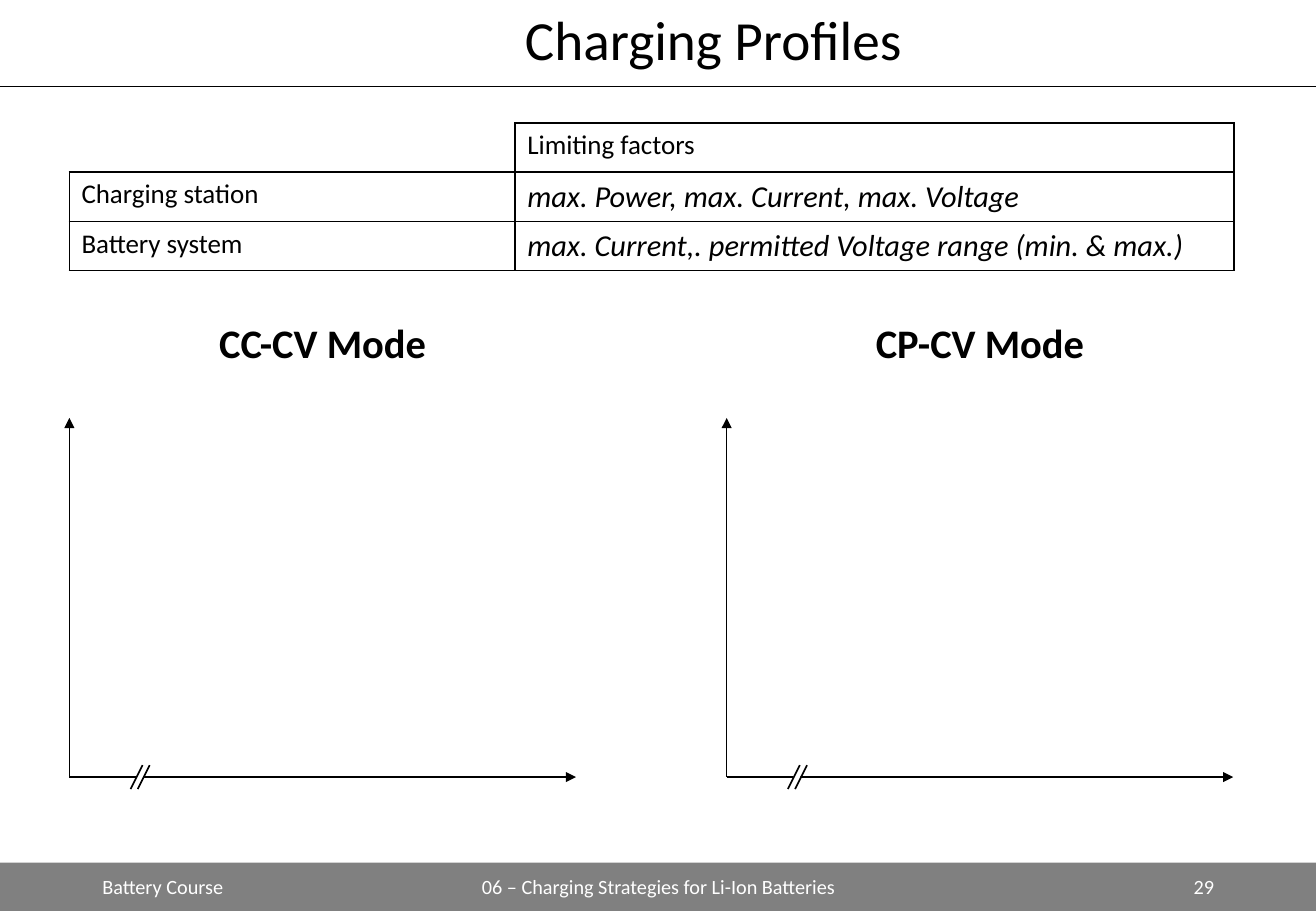
from dataclasses import dataclass

from lxml import etree
from pptx import Presentation
from pptx.dml.color import RGBColor
from pptx.enum.shapes import MSO_CONNECTOR, MSO_SHAPE
from pptx.enum.text import MSO_ANCHOR, MSO_AUTO_SIZE, PP_ALIGN
from pptx.oxml.ns import qn
from pptx.shapes.autoshape import Shape
from pptx.shapes.connector import Connector
from pptx.slide import Slide
from pptx.table import _Cell
from pptx.text.text import TextFrame
from pptx.util import Cm, Pt

BLACK = RGBColor(0x00, 0x00, 0x00)
WHITE = RGBColor(0xFF, 0xFF, 0xFF)
GRAY = RGBColor(0x80, 0x80, 0x80)
FONT = "Calibri"
LEFT, CENTER, RIGHT = PP_ALIGN.LEFT, PP_ALIGN.CENTER, PP_ALIGN.RIGHT
TOP, MIDDLE = MSO_ANCHOR.TOP, MSO_ANCHOR.MIDDLE
NO_AUTOSIZE = MSO_AUTO_SIZE.NONE
STRAIGHT = MSO_CONNECTOR.STRAIGHT
RECTANGLE = MSO_SHAPE.RECTANGLE
PARALLELOGRAM = MSO_SHAPE.FLOWCHART_DATA

SLIDE_WIDTH, SLIDE_HEIGHT = 27.51, 19.05
HEADER_HEIGHT = 1.8
FOOTER_TOP, FOOTER_HEIGHT = 18.04, 1.01
AXIS_TOP, AXIS_BOTTOM, AXIS_LENGTH = 8.74, 16.25, 10.59
BREAK_OFFSETS = (1.28, 1.43)
BREAK_WIDTH, BREAK_HEIGHT = 0.25, 0.5
TABLE_LEFT, TABLE_TOP = 1.45, 2.57
COLUMN_WIDTHS = (9.32, 15.03)
ROW_HEIGHT = 1.03


@dataclass(frozen=True)
class TextStyle:
    size: float
    color: RGBColor = BLACK
    bold: bool = False
    italic: bool = False
    align: PP_ALIGN = LEFT
    anchor: MSO_ANCHOR = TOP


@dataclass(frozen=True)
class FooterItem:
    text: str
    left: float
    width: float
    align: PP_ALIGN


@dataclass(frozen=True)
class ChargingMode:
    name: str
    left: float


FOOTER_ITEMS = (
    FooterItem("Battery Course", 1.89, 6.2, LEFT),
    FooterItem("06 – Charging Strategies for Li-Ion Batteries", 9.12, 9.3, CENTER),
    FooterItem("29", 19.43, 6.2, RIGHT),
)
MODES = (ChargingMode("CC-CV Mode", 1.45), ChargingMode("CP-CV Mode", 15.19))
LIMITS = (
    ("", "Limiting factors"),
    ("Charging station", "max. Power, max. Current, max. Voltage"),
    ("Battery system", "max. Current,. permitted Voltage range (min. & max.)"),
)
TITLE_STYLE = TextStyle(32.7, align=CENTER, anchor=MIDDLE)
MODE_STYLE = TextStyle(24, bold=True, align=CENTER)
LABEL_STYLE = TextStyle(16)
LIMIT_STYLE = TextStyle(18, italic=True)


def write_text(frame: TextFrame, text: str, style: TextStyle) -> None:
    paragraph = frame.paragraphs[0]
    paragraph.alignment = style.align
    run = paragraph.add_run()
    run.text = text
    run.font.name = FONT
    run.font.size = Pt(style.size)
    run.font.bold = style.bold
    run.font.italic = style.italic
    run.font.color.rgb = style.color


def add_text(slide: Slide, text: str, left: float, top: float, width: float,
             height: float, style: TextStyle) -> None:
    box = slide.shapes.add_textbox(Cm(left), Cm(top), Cm(width), Cm(height))
    box.text_frame.word_wrap = True
    box.text_frame.vertical_anchor = style.anchor
    write_text(box.text_frame, text, style)


def add_line(slide: Slide, x1: float, y1: float, x2: float, y2: float,
             width: float = 1) -> Connector:
    line = slide.shapes.add_connector(STRAIGHT, Cm(x1), Cm(y1), Cm(x2), Cm(y2))
    line.line.color.rgb = BLACK
    line.line.width = Pt(width)
    etree.SubElement(line._element.spPr, qn("a:effectLst"))
    return line


def add_arrow(slide: Slide, x1: float, y1: float, x2: float, y2: float) -> None:
    arrow = add_line(slide, x1, y1, x2, y2)
    etree.SubElement(arrow.line._get_or_add_ln(), qn("a:tailEnd"), type="triangle")


def add_filled_shape(slide: Slide, kind: MSO_SHAPE, left: float, top: float,
                     width: float, height: float, color: RGBColor) -> Shape:
    shape = slide.shapes.add_shape(kind, Cm(left), Cm(top), Cm(width), Cm(height))
    shape.shadow.inherit = False
    shape.fill.solid()
    shape.fill.fore_color.rgb = color
    shape.line.fill.background()
    return shape


def add_title(slide: Slide) -> None:
    title = slide.shapes.title
    title.left, title.top = Cm(4.22), Cm(0)
    title.width, title.height = Cm(21.39), Cm(HEADER_HEIGHT)
    title.text_frame.auto_size = NO_AUTOSIZE
    title.text_frame.vertical_anchor = TITLE_STYLE.anchor
    write_text(title.text_frame, "Charging Profiles", TITLE_STYLE)
    title.text_frame.paragraphs[0].line_spacing = 0.9


def add_footer(slide: Slide) -> None:
    add_filled_shape(slide, RECTANGLE, 0, FOOTER_TOP, SLIDE_WIDTH, FOOTER_HEIGHT, GRAY)
    for item in FOOTER_ITEMS:
        style = TextStyle(12, WHITE, align=item.align, anchor=MIDDLE)
        add_text(slide, item.text, item.left, FOOTER_TOP, item.width,
                 FOOTER_HEIGHT, style)


def set_borders(cell: _Cell, sides: str) -> None:
    """Draw black borders on the sides named by letters, in the order L, R, T, B."""
    properties = cell._tc.get_or_add_tcPr()
    for side in sides:
        border = etree.SubElement(properties, qn(f"a:ln{side}"), w=str(Pt(1)))
        fill = etree.SubElement(border, qn("a:solidFill"))
        etree.SubElement(fill, qn("a:srgbClr"), val=str(BLACK))


def add_limits_table(slide: Slide) -> None:
    table = slide.shapes.add_table(
        len(LIMITS), len(COLUMN_WIDTHS), Cm(TABLE_LEFT), Cm(TABLE_TOP),
        Cm(sum(COLUMN_WIDTHS)), Cm(ROW_HEIGHT * len(LIMITS))).table
    table.first_row = False
    table.horz_banding = False
    for column, width in zip(table.columns, COLUMN_WIDTHS):
        column.width = Cm(width)
    for row_index, texts in enumerate(LIMITS):
        table.rows[row_index].height = Cm(ROW_HEIGHT)
        for column_index, text in enumerate(texts):
            cell = table.cell(row_index, column_index)
            set_borders(cell, "LRTB" if text else "RB")
            cell.fill.background()
            if text:
                is_limit = row_index > 0 and column_index > 0
                write_text(cell.text_frame, text,
                           LIMIT_STYLE if is_limit else LABEL_STYLE)


def add_mode_diagram(slide: Slide, mode: ChargingMode) -> None:
    """Draw a heading over empty axes whose horizontal axis is broken."""
    add_text(slide, mode.name, mode.left, 6.53, AXIS_LENGTH, 1.28, MODE_STYLE)
    add_arrow(slide, mode.left, AXIS_BOTTOM, mode.left + AXIS_LENGTH, AXIS_BOTTOM)
    add_arrow(slide, mode.left, AXIS_BOTTOM, mode.left, AXIS_TOP)
    break_top = AXIS_BOTTOM - BREAK_HEIGHT / 2
    add_filled_shape(slide, PARALLELOGRAM, mode.left + 1.38, AXIS_BOTTOM - 0.57,
                     0.18, 1.14, WHITE)
    for offset in BREAK_OFFSETS:
        left = mode.left + offset
        add_line(slide, left + BREAK_WIDTH, break_top, left, break_top + BREAK_HEIGHT)


def main() -> None:
    presentation = Presentation()
    presentation.slide_width = Cm(SLIDE_WIDTH)
    presentation.slide_height = Cm(SLIDE_HEIGHT)
    slide = presentation.slides.add_slide(presentation.slide_layouts[5])
    add_footer(slide)
    add_line(slide, 0, HEADER_HEIGHT, SLIDE_WIDTH, HEADER_HEIGHT, 0.5)
    add_title(slide)
    add_limits_table(slide)
    for mode in MODES:
        add_mode_diagram(slide, mode)
    presentation.save("out.pptx")


if __name__ == "__main__":
    main()
